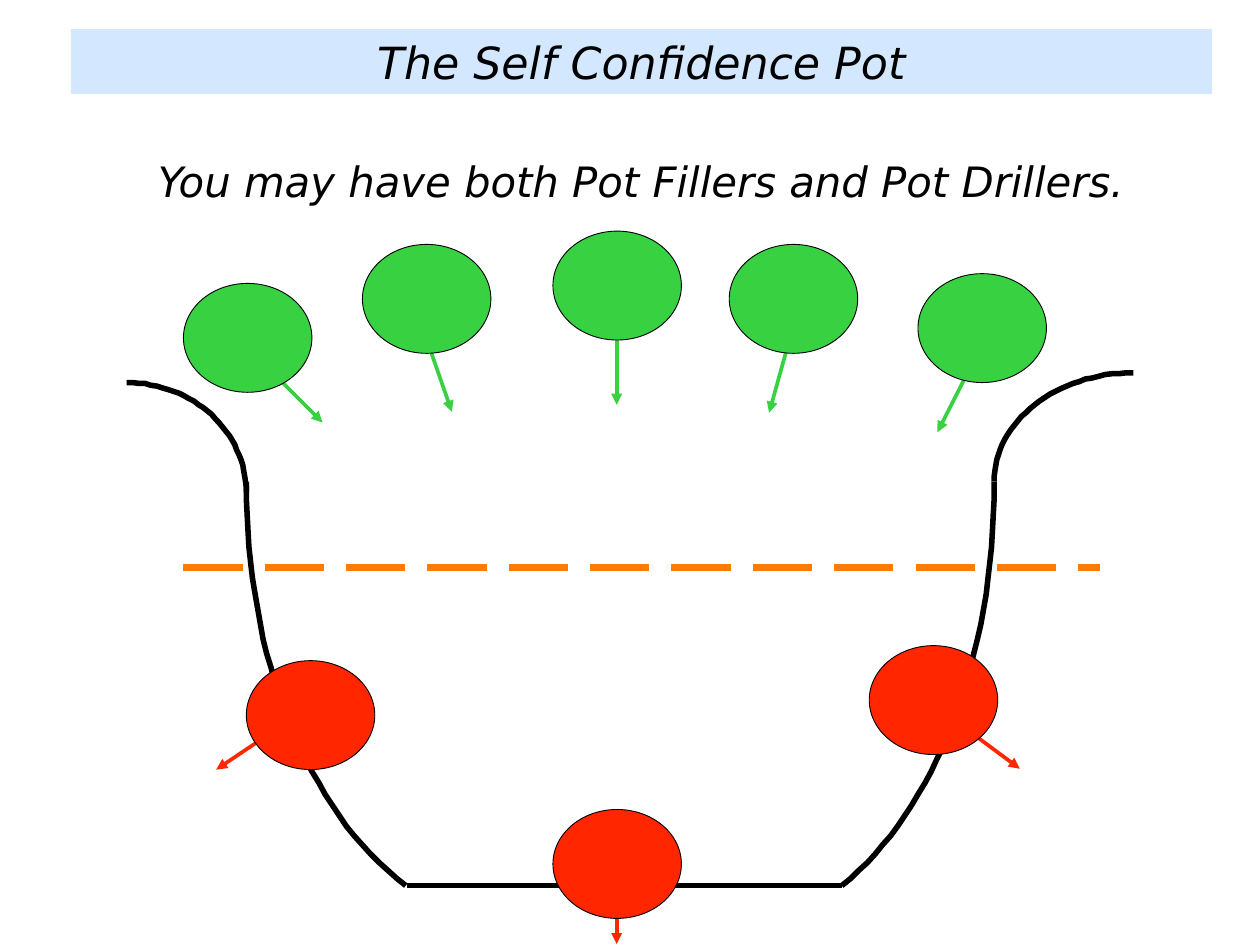
from dataclasses import dataclass

from pptx import Presentation, util as u
from pptx.dml.color import RGBColor
from pptx.enum import dml, shapes, text
from pptx.oxml import parse_xml
from pptx.oxml.ns import nsdecls

PX = 9144  # EMU per px, 100 px to the inch
COLORS = {"band": "D3E8FF", "ink": "000000", "fill": "38D142",
          "drill": "FF2600", "level": "FF7C00"}
BALL = (145, 123)
STEPS = 32
Point = tuple[float, float]


@dataclass
class Ball:
    color: str
    left: int
    top: int
    tail: Point
    tip: Point


@dataclass
class Curve:
    start: Point
    bend: Point
    pull: Point
    end: Point

    def at(self, t: float) -> Point:
        s = 1 - t
        parts = (s ** 3, 3 * s * s * t, 3 * s * t * t, t ** 3)
        nodes = (self.start, self.bend, self.pull, self.end)
        return (sum(k * n[0] for k, n in zip(parts, nodes)),
                sum(k * n[1] for k, n in zip(parts, nodes)))


# Fillers aim into the pot, drillers aim out of it
BALLS = [
    Ball("fill", 207, 320, (319, 432), (364, 477)),
    Ball("fill", 409, 276, (487, 399), (510, 465)),
    Ball("fill", 624, 261, (696, 378), (696, 457)),
    Ball("fill", 823, 276, (890, 387), (868, 466)),
    Ball("fill", 1036, 309, (1092, 421), (1058, 488)),
    Ball("drill", 278, 746, (311, 824), (244, 869)),
    Ball("drill", 981, 729, (1062, 802), (1151, 868)),
    Ball("drill", 624, 914, (696, 992), (696, 1066)),
]
# Walls, then rims
CURVES = [
    Curve((950, 1000), (1055, 915), (1122, 745), (1122, 544)),
    Curve((458, 1000), (347, 915), (278, 745), (278, 544)),
    Curve((1279, 421), (1192, 421), (1122, 476), (1122, 544)),
    Curve((143, 432), (218, 432), (278, 488), (278, 556)),
]


def rgb(name: str) -> RGBColor:
    return RGBColor.from_string(COLORS[name])


def scale(*sizes: int) -> list[int]:
    return [size * PX for size in sizes]


def pen(shape, color: str, width: float) -> None:
    shape.line.color.rgb = rgb(color)
    shape.line.width = u.Pt(width)


def write(box, words: str, area: tuple, size: int) -> None:
    box.left, box.top, box.width, box.height = scale(*area)
    frame = box.text_frame
    frame.text = words
    edge = u.Emu(6 * PX)
    looks = {"word_wrap": True, "auto_size": text.MSO_AUTO_SIZE.NONE,
             "vertical_anchor": text.MSO_ANCHOR.MIDDLE,
             "margin_left": edge, "margin_right": edge,
             "margin_top": edge, "margin_bottom": edge}
    for key, value in looks.items():
        setattr(frame, key, value)
    para = frame.paragraphs[0]
    para.alignment = text.PP_ALIGN.CENTER
    para.space_before = u.Pt(0)
    props = para._p.get_or_add_pPr()
    props.set("marL", "0")
    props.set("indent", "0")
    props.append(parse_xml(f"<a:buNone {nsdecls('a')}/>"))
    font = para.runs[0].font
    for key, value in {"name": "DejaVu Sans", "size": u.Pt(size),
                       "italic": True, "bold": False}.items():
        setattr(font, key, value)
    font.color.rgb = rgb("ink")


def line(slide, start: Point, end: Point, color: str, width: float):
    link = slide.shapes.add_connector(
        shapes.MSO_CONNECTOR.STRAIGHT, *scale(*start, *end))
    pen(link, color, width)
    link._element.spPr.append(parse_xml(f"<a:effectLst {nsdecls('a')}/>"))
    return link


def curve(slide, bow: Curve) -> None:
    pen_at = slide.shapes.build_freeform(*bow.start, scale=PX)
    pen_at.add_line_segments(
        [bow.at(i / STEPS) for i in range(1, STEPS + 1)], close=False)
    shape = pen_at.convert_to_shape()
    shape.shadow.inherit = False
    shape.fill.background()
    pen(shape, "ink", 4.5)


def ball(slide, item: Ball) -> None:
    arrow = line(slide, item.tail, item.tip, item.color, 3)
    arrow.line._get_or_add_ln().append(
        parse_xml(f"<a:tailEnd {nsdecls('a')} type='triangle'/>"))
    disc = slide.shapes.add_shape(
        shapes.MSO_SHAPE.OVAL, *scale(item.left, item.top, *BALL))
    disc.shadow.inherit = False
    disc.fill.solid()
    disc.fill.fore_color.rgb = rgb(item.color)
    pen(disc, "ink", 0.75)


def main() -> None:
    deck = Presentation()
    deck.slide_width, deck.slide_height = scale(1422, 1067)
    slide = deck.slides.add_slide(deck.slide_layouts[1])

    # Title band and message
    title, body = slide.placeholders
    write(title, "The Self Confidence Pot", (80, 33, 1288, 73), 36)
    title.fill.solid()
    title.fill.fore_color.rgb = rgb("band")
    write(body, "You may have both Pot Fillers and Pot Drillers.",
          (56, 170, 1335, 69), 34)

    # Pot outline
    for bow in CURVES:
        curve(slide, bow)
    line(slide, (459, 1000), (950, 1000), "ink", 4.5)

    # Confidence level
    level = line(slide, (207, 641), (1241, 641), "level", 6)
    level.line.dash_style = dml.MSO_LINE.LONG_DASH

    # Fillers and drillers
    for item in BALLS:
        ball(slide, item)

    deck.save("out.pptx")


if __name__ == "__main__":
    main()
